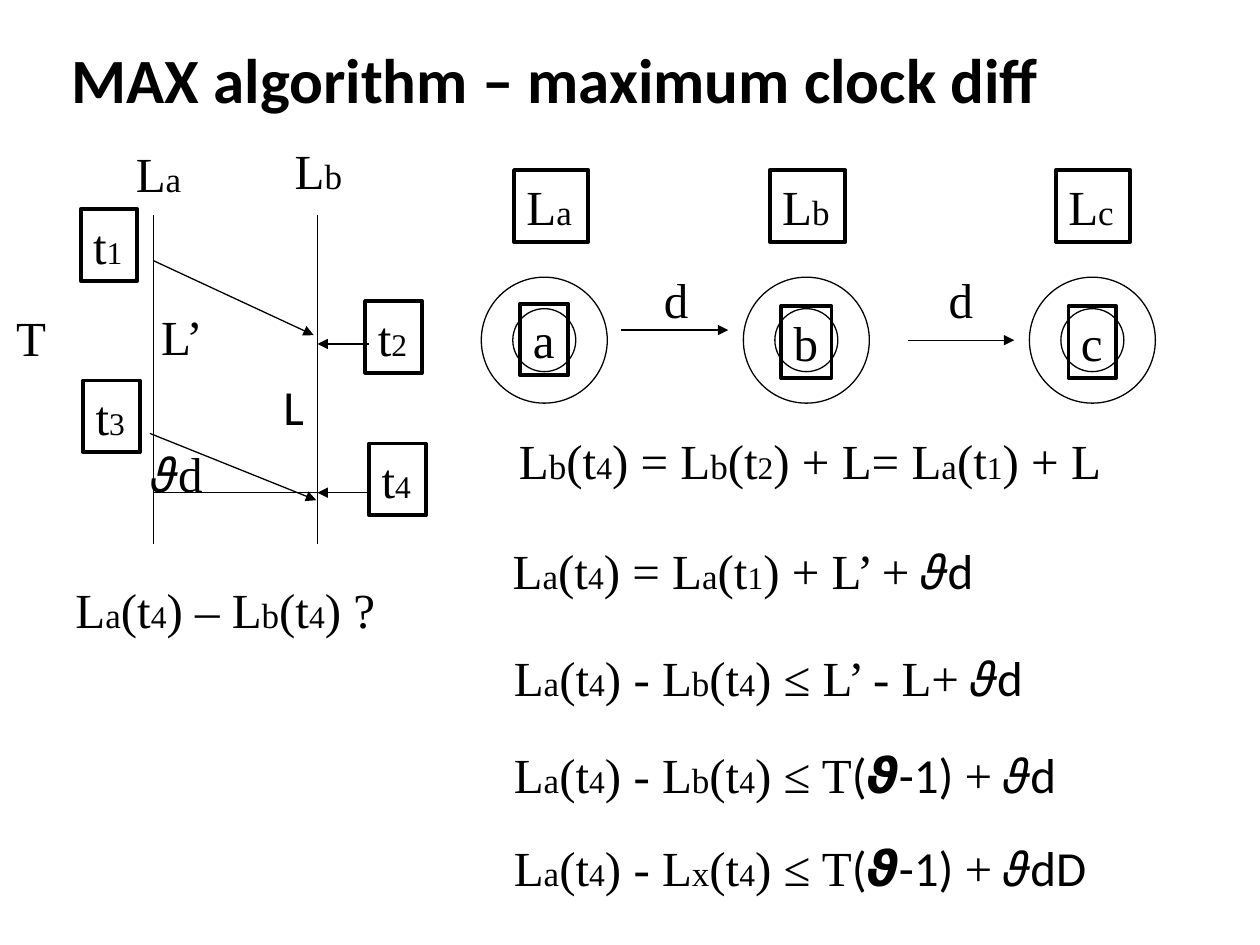
from lxml.etree import SubElement
from pptx import Presentation
from pptx.dml.color import RGBColor
from pptx.enum.shapes import MSO_CONNECTOR as LINK, MSO_SHAPE as SHAPE
from pptx.enum.text import MSO_ANCHOR as ANCHOR, MSO_AUTO_SIZE as FIT, PP_ALIGN as ALIGN
from pptx.oxml.ns import qn
from pptx.util import Inches, Pt

BLACK = RGBColor(0, 0, 0)
SERIF, SANS = "Times New Roman", "Calibri"
HIGH = 0.57  # height of one line of text with its margins

# Markup: "_" lowers the next character, "|" switches between serif and sans.
TITLE = "MAX algorithm – maximum clock diff"
LABELS = [  # text, left, top, width
    ("L_a", 0.98, 1.09, 0.57),
    ("L_b", 2.24, 1.07, 0.58),
    ("T", 0.03, 2.39, 0.44),
    ("L’", 1.18, 2.38, 0.54),
    ("|L", 2.15, 2.94, 0.37),
    ("|𝜗|d", 1.1, 3.47, 0.63),
    ("d", 5.17, 2.09, 0.4),
    ("d", 7.43, 2.09, 0.4),
]
FORMULAS = [
    ("L_a(t_4) – L_b(t_4) ?", 0.5, 4.55, 2.85),
    ("L_b(t_4) = L_b(t_2) + L= L_a(t_1) + L", 4.02, 3.37, 4.89),
    ("L_a(t_4) = L_a(t_1) + L’ +| 𝜗d", 3.97, 4.24, 3.91),
    ("L_a(t_4) - L_b(t_4) ≤ L’ - L+| 𝜗d", 3.98, 5.09, 4.3),
    ("L_a(t_4) - L_b(t_4) ≤ T|(𝟅-1) |+| 𝜗d", 3.98, 5.86, 4.56),
    ("L_a(t_4) - L_x(t_4) ≤ T|(𝟅-1) |+| 𝜗dD", 3.98, 6.6, 4.8),
]
TIMES = [
    ("t_1", 0.64, 1.66, 0.45),
    ("t_2", 2.9, 2.39, 0.45),
    ("t_3", 0.66, 3.02, 0.45),
    ("t_4", 2.93, 3.52, 0.45),
]
NODES = [  # name, ring left, name box (left, top, width), clock box (left, width)
    ("a", 3.82, (4.13, 2.41, 0.38), (4.08, 0.59)),
    ("b", 5.9, (6.2, 2.43, 0.4), (6.11, 0.6)),
    ("c", 8.17, (8.48, 2.43, 0.38), (8.38, 0.59)),
]
RING_TOP, CLOCK_TOP = 2.2, 1.35
AXIS_A, AXIS_B = 1.22, 2.52
LINES = [  # from x, y, to x, y
    (AXIS_A, 1.71, AXIS_A, 4.32),
    (AXIS_B, 1.71, AXIS_B, 4.32),
    (AXIS_A, 3.91, AXIS_B, 3.91),
]
ARROWS = [
    (AXIS_A, 2.07, 2.49, 2.66),
    (1.19, 3.44, 2.51, 3.97),
    (2.93, 2.73, AXIS_B, 2.73),
    (2.93, 3.91, AXIS_B, 3.91),
    (4.93, 2.62, 5.78, 2.62),
    (7.21, 2.7, 8.05, 2.7),
]

deck = Presentation()
deck.slide_width, deck.slide_height = Inches(10), Inches(7.5)
shapes = deck.slides.add_slide(deck.slide_layouts[6]).shapes


def add_run(para, text, size, font, bold=False):
    if text:
        run = para.add_run()
        run.text = text
        run.font.size, run.font.name, run.font.bold = Pt(size), font, bold
        run.font.color.rgb = BLACK


def write(para, markup):
    """Turn the markup into runs."""
    for i, part in enumerate(markup.split("|")):
        font = SANS if i % 2 else SERIF
        first, *rest = part.split("_")
        add_run(para, first, 28, font)
        for piece in rest:
            add_run(para, piece[0], 18 if piece[0].isdigit() else 20, font)
            add_run(para, piece[1:], 28, font)


def outline(shape, width):
    shape.shadow.inherit = False
    shape.fill.background()
    shape.line.color.rgb = BLACK
    shape.line.width = Pt(width)


def add_label(markup, left, top, width, framed=False):
    place = [Inches(n) for n in (left, top, width, HIGH)]
    if framed:
        box = shapes.add_shape(SHAPE.RECTANGLE, *place)
        outline(box, 2.25)
    else:
        box = shapes.add_textbox(*place)
    frame = box.text_frame
    frame.word_wrap = False
    frame.auto_size = FIT.SHAPE_TO_FIT_TEXT
    frame.vertical_anchor = ANCHOR.TOP
    frame.paragraphs[0].alignment = ALIGN.LEFT
    write(frame.paragraphs[0], markup)


def add_line(ends, arrow=False):
    line = shapes.add_connector(LINK.STRAIGHT, *[Inches(n) for n in ends])
    line.line.color.rgb = BLACK
    line.line.width = Pt(0.75)
    props = line.element.spPr
    if arrow:
        SubElement(props.find(qn("a:ln")), qn("a:tailEnd"), type="triangle")
    SubElement(props, qn("a:effectLst"))


title = shapes.add_textbox(Inches(0.47), Inches(0.25), Inches(9.19), Inches(0.75)).text_frame
title.word_wrap = True
title.vertical_anchor = ANCHOR.MIDDLE
add_run(title.paragraphs[0], TITLE, 36, SANS, bold=True)

for ends in LINES:
    add_line(ends)
for ends in ARROWS:
    add_line(ends, arrow=True)
for name, left, spot, (clock_left, clock_width) in NODES:
    ring = shapes.add_shape(SHAPE.DONUT, Inches(left), Inches(RING_TOP), Inches(1), Inches(1))
    outline(ring, 0.75)
    add_label(name, *spot, framed=True)
    add_label("L_" + name, clock_left, CLOCK_TOP, clock_width, framed=True)
for item in TIMES:
    add_label(*item, framed=True)
for item in LABELS + FORMULAS:
    add_label(*item)

deck.save("out.pptx")
